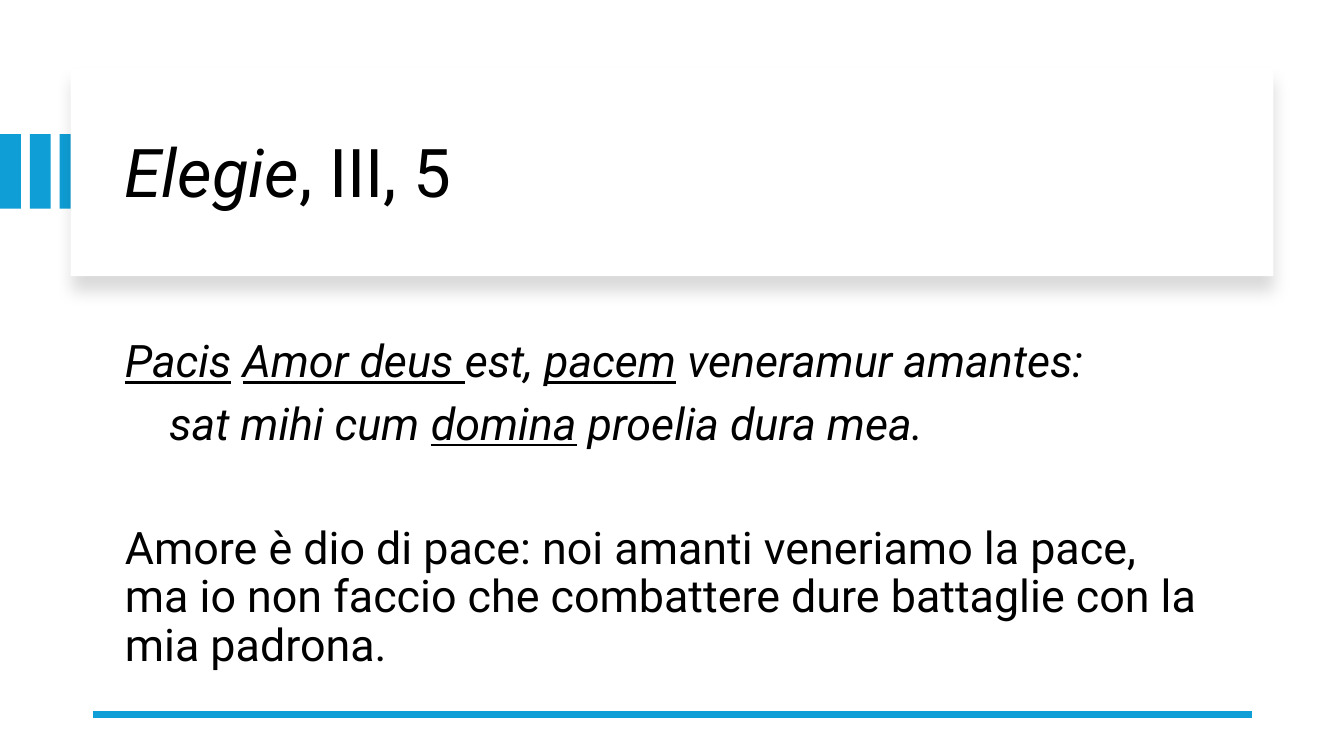
from dataclasses import dataclass

from lxml import etree
from pptx import Presentation
from pptx.dml.color import RGBColor
from pptx.enum.shapes import MSO_CONNECTOR, MSO_SHAPE
from pptx.enum.text import MSO_ANCHOR
from pptx.oxml.ns import qn
from pptx.util import Inches, Pt

RECT = MSO_SHAPE.RECTANGLE
STRAIGHT = MSO_CONNECTOR.STRAIGHT
MIDDLE = MSO_ANCHOR.MIDDLE
WIDTH, HEIGHT = 13.33, 7.5


@dataclass(frozen=True)
class Theme:
    font: str = "Roboto"
    ink: str = "000000"
    paper: str = "FFFFFF"
    accent: str = "0F9ED5"
    title_size: int = 48
    body_size: int = 32
    line_spacing: float = 0.9
    gap: int = 10
    rule_width: float = 4.5


THEME = Theme()

TITLE = [[("Elegie", "i"), (", III, 5", "")]]
COUPLET_AND_TRANSLATION = [
    [("Pacis", "iu"), (" ", "i"), ("Amor deus ", "iu"), ("est, ", "i"),
     ("pacem", "iu"), (" veneramur amantes:", "i")],
    [("sat mihi cum ", "i"), ("domina", "iu"), (" proelia dura mea.", "i")],
    [("Amore è dio di pace: noi amanti veneriamo la pace, ma io non faccio "
      "che combattere dure battaglie con la mia padrona.", "")],
]


def add_rect(s, box, color):
    sp = s.shapes.add_shape(RECT, *map(Inches, box))
    sp.shadow.inherit = False
    sp.fill.solid()
    sp.fill.fore_color.rgb = RGBColor.from_string(color)
    sp.line.fill.background()
    return sp


def add_text(s, box, paragraphs, size):
    tf = s.shapes.add_textbox(*map(Inches, box)).text_frame
    tf.word_wrap = True
    tf.vertical_anchor = MIDDLE
    for i, runs in enumerate(paragraphs):
        p = tf.add_paragraph() if i else tf.paragraphs[0]
        p.line_spacing = THEME.line_spacing
        for text, style in runs:
            r = p.add_run()
            r.text = text
            r.font.name = THEME.font
            r.font.size = Pt(size)
            r.font.color.rgb = RGBColor.from_string(THEME.ink)
            r.font.italic = "i" in style
            r.font.underline = "u" in style
    return tf


def add_soft_shadow(sp):
    effects = sp._element.spPr.find(qn("a:effectLst"))
    shadow = etree.SubElement(effects, qn("a:outerShdw"), blurRad=str(Pt(11)),
                              dist=str(Pt(10)), dir="5400000", algn="t",
                              rotWithShape="0")
    color = etree.SubElement(shadow, qn("a:srgbClr"), val=THEME.ink)
    etree.SubElement(color, qn("a:alpha"), val="15000")


def stripes(s, box, count=3):
    left, top, width, height = box
    bar = 0.26 * width
    pitch = (width - bar) / (count - 1)
    for i in range(count):
        add_rect(s, (left + i * pitch, top, bar, height), THEME.accent)


def title_card(s, box):
    left, top, width, height = box
    add_soft_shadow(add_rect(s, box, THEME.paper))
    add_text(s, (left + 0.44, top + 0.22, width - 1.06, height - 0.37),
             TITLE, THEME.title_size)


def verses(s, box):
    tf = add_text(s, box, COUPLET_AND_TRANSLATION, THEME.body_size)
    for p in tf.paragraphs:
        p.space_before = Pt(THEME.gap)
    _, pentameter, translation = tf.paragraphs
    pentameter._p.get_or_add_pPr().set("marL", str(Inches(0.44)))
    empty_line = 1.17 * THEME.line_spacing * THEME.body_size
    translation.space_before = Pt(round(2 * THEME.gap + empty_line))


def footer_rule(s, box):
    left, top, width, _ = box
    line = s.shapes.add_connector(STRAIGHT, Inches(left), Inches(top),
                                  Inches(left + width), Inches(top))
    line.line.color.rgb = RGBColor.from_string(THEME.accent)
    line.line.width = Pt(THEME.rule_width)
    etree.SubElement(line._element.spPr, qn("a:effectLst"))


def elegy_slide(prs):
    s = prs.slides.add_slide(prs.slide_layouts[6])
    s.background.fill.solid()
    s.background.fill.fore_color.rgb = RGBColor.from_string(THEME.paper)
    stripes(s, (0, 1.33, 0.8, 0.74))
    title_card(s, (0.7, 0.67, 11.93, 2.07))
    verses(s, (1.14, 3.3, 10.87, 3.42))
    footer_rule(s, (0.92, 7.09, 11.5, 0))


def main():
    prs = Presentation()
    prs.slide_width, prs.slide_height = Inches(WIDTH), Inches(HEIGHT)
    elegy_slide(prs)
    prs.save("out.pptx")


if __name__ == "__main__":
    main()
